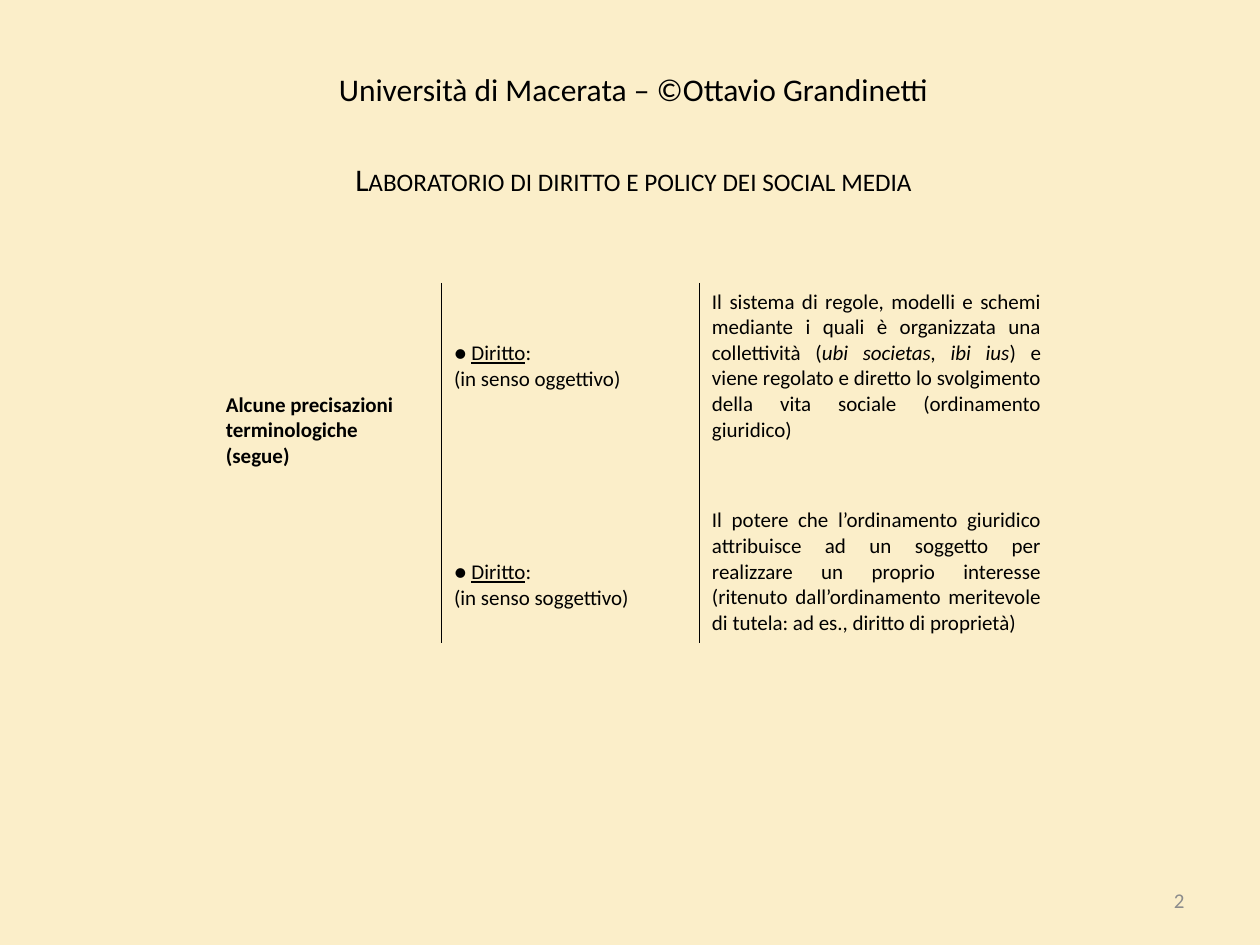
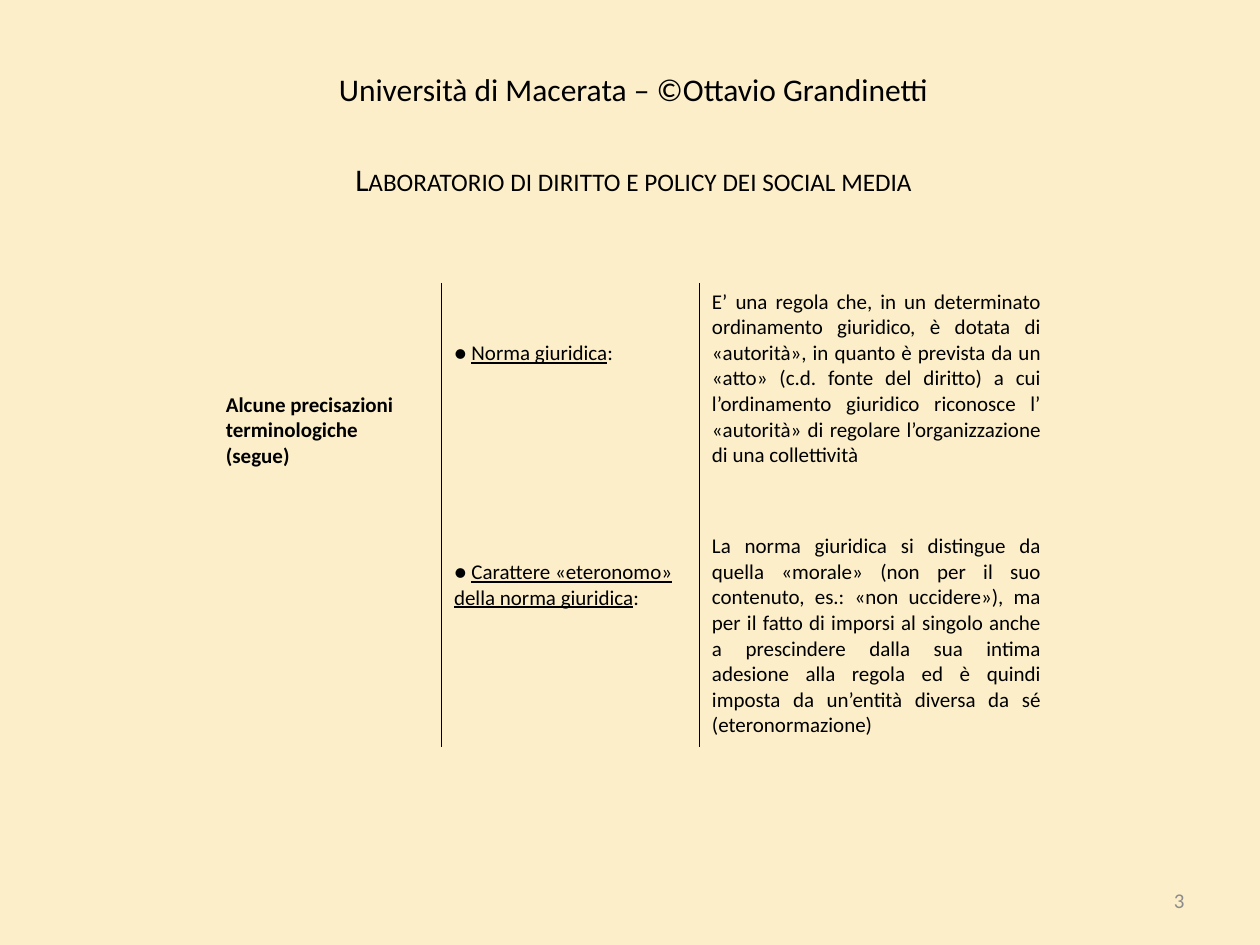
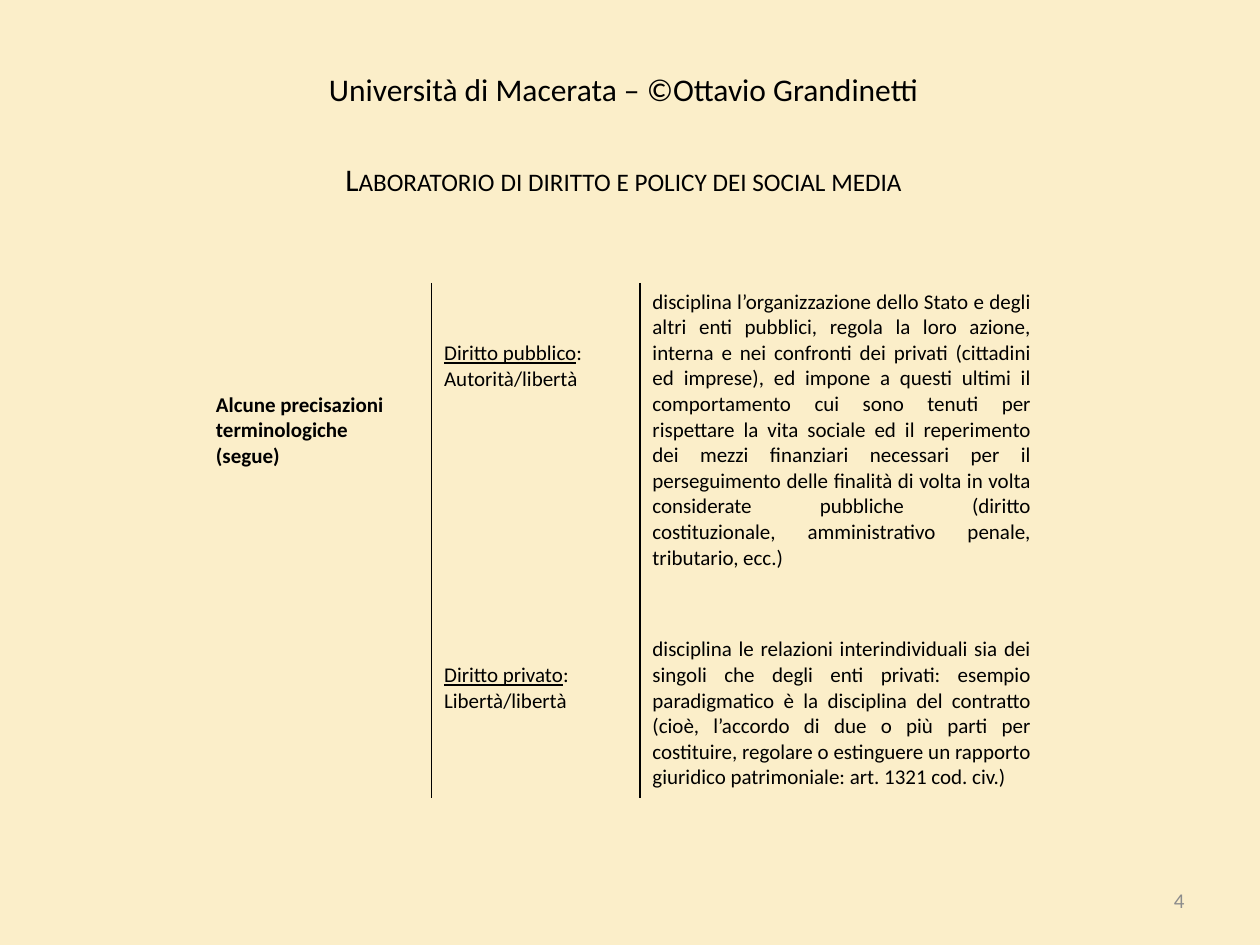
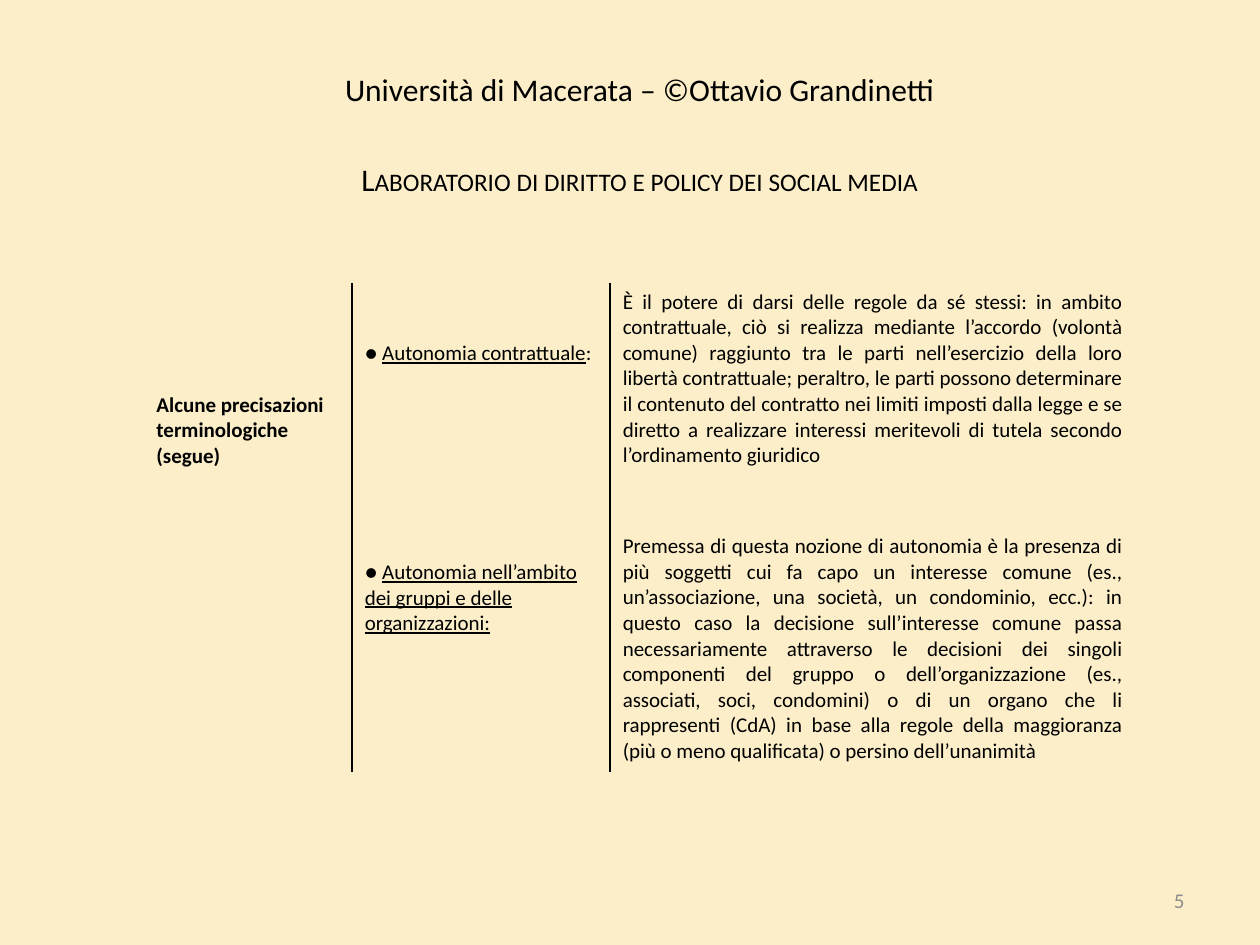
"""Build four slides of legal definitions, each laid out in a bordered table."""
import pptx
import pptx.dml.color
import pptx.enum.text
import pptx.oxml
import pptx.oxml.ns
import pptx.util

Cm, Pt = pptx.util.Cm, pptx.util.Pt
ALIGN = pptx.enum.text.PP_ALIGN
COLORS = {"paper": "FBEEC9", "ink": "000000", "number": "8C8C8C"}
NO_GRID = "{2D5ABB26-0587-4C30-8999-92F81FD0307C}"
PAD, LINE, HEAD_LINE = 0.13, 0.52, 0.77
HEADING = "Università di Macerata – ©Ottavio Grandinetti"
COURSE = "Laboratorio di diritto e policy dei social media"
TOPIC = [["Alcune precisazioni terminologiche"], ["(segue)"]]
DOT = "● "


class Deck:
    """Hold the shared style and the current slide."""

    def __init__(self):
        self.prs = pptx.Presentation()
        self.prs.slide_width, self.prs.slide_height = Cm(25.4), Cm(19.05)
        self.s = None

    def rgb(self, name):
        return pptx.dml.color.RGBColor.from_string(COLORS[name])

    def slide(self, number):
        self.s = self.prs.slides.add_slide(self.prs.slide_layouts[6])
        fill = self.s.background.fill
        fill.solid()
        fill.fore_color.rgb = self.rgb("paper")
        sp = self.s.shapes.add_textbox(Cm(18.2), Cm(17.65), Cm(5.93), Cm(1.01))
        sp.text_frame.vertical_anchor = pptx.enum.text.MSO_ANCHOR.MIDDLE
        self.text(sp.text_frame, [[str(number)]], align=ALIGN.RIGHT, color="number")

    def text(self, tf, paragraphs, size=12, align=ALIGN.LEFT, color="ink", bold=False):
        tf.word_wrap = True
        for i, runs in enumerate(paragraphs):
            p = tf.add_paragraph() if i else tf.paragraphs[0]
            p.alignment = align
            p.font.name, p.font.size, p.font.bold = "Calibri", Pt(size), bold
            p.font.color.rgb = self.rgb(color)
            for run in runs:
                words, style = run if isinstance(run, tuple) else (run, "")
                r = p.add_run()
                r.text = words
                if style == "underline":
                    r.font.underline = True
                elif style == "italic":
                    r.font.italic = True
                elif style == "small caps":
                    r._r.get_or_add_rPr().set("cap", "small")

    def cell(self, cell, paragraphs, drop=0.0, **style):
        cell.margin_top = Cm(PAD + drop)
        self.text(cell.text_frame, paragraphs, **style)

    def border(self, cell, side):
        ln = pptx.oxml.parse_xml(
            f'<a:{side} {pptx.oxml.ns.nsdecls("a")} w="12700"><a:solidFill>'
            f'<a:srgbClr val="{COLORS["ink"]}"/></a:solidFill></a:{side}>')
        cell._tc.get_or_add_tcPr().insert(0, ln)

    def table(self, left, widths, entries):
        heights = [1.03, 3.35] + [2 * PAD + LINE * e["lines"] for e in entries]
        heights.insert(3, 1.03)
        frame = self.s.shapes.add_table(5, 3, Cm(left), Cm(1.32),
                                        Cm(sum(widths)), Cm(sum(heights)))
        t = frame.table
        t.first_row = t.horz_banding = False
        t._tbl.tblPr.find(pptx.oxml.ns.qn("a:tableStyleId")).text = NO_GRID
        for column, width in zip(t.columns, widths):
            column.width = Cm(width)
        for row, height in zip(t.rows, heights):
            row.height = Cm(height)
        for c in t.iter_cells():
            c.fill.background()
            c.margin_bottom = Cm(PAD)
        for row in (0, 1):
            t.cell(row, 0).merge(t.cell(row, 2))
        t.cell(2, 0).merge(t.cell(4, 0))
        for row in (2, 3, 4):
            self.border(t.cell(row, 0), "lnR")
            self.border(t.cell(row, 1), "lnL")
        self.cell(t.cell(0, 0), [[HEADING]], size=18, align=ALIGN.CENTER)
        self.cell(t.cell(1, 0), [[(COURSE, "small caps")]], HEAD_LINE,
                  size=18, align=ALIGN.CENTER)
        self.cell(t.cell(2, 0), TOPIC, 4 * LINE, bold=True)
        for row, e in zip((2, 4), entries):
            self.cell(t.cell(row, 1), e["term"], e["drop"] * LINE)
            self.cell(t.cell(row, 2), [e["meaning"]], align=ALIGN.JUSTIFY)


def entry(lines, drop, term, *meaning, mark=DOT, end=":", note=None):
    first = [mark] if mark else []
    first.append((term, "underline"))
    if end:
        first.append(end)
    paragraphs = [first, [note]] if note else [first]
    return {"lines": lines, "drop": drop, "term": paragraphs, "meaning": meaning}


SLIDES = [
    (4.3, (4.6, 5.2, 7.14), [
        entry(6, 2, "Diritto",
              "Il sistema di regole, modelli e schemi mediante i quali è organizzata una "
              "collettività (", ("ubi societas, ibi ius", "italic"),
              ") e viene regolato e diretto lo svolgimento della vita sociale "
              "(ordinamento giuridico)", note="(in senso oggettivo)"),
        entry(5, 2, "Diritto",
              "Il potere che l’ordinamento giuridico attribuisce ad un soggetto per "
              "realizzare un proprio interesse (ritenuto dall’ordinamento meritevole di "
              "tutela: ad es., diritto di proprietà)", note="(in senso soggettivo)")]),
    (4.3, (4.6, 5.2, 7.14), [
        entry(7, 2, "Norma giuridica",
              "E’ una regola che, in un determinato ordinamento giuridico, è dotata di "
              "«autorità», in quanto è prevista da un «atto» (c.d. fonte del diritto) a cui "
              "l’ordinamento giuridico riconosce l’ «autorità» di regolare "
              "l’organizzazione di una collettività"),
        entry(8, 1, "Carattere «eteronomo» della norma giuridica",
              "La norma giuridica si distingue da quella «morale» (non per il suo "
              "contenuto, es.: «non uccidere»), ma per il fatto di imporsi al singolo anche "
              "a prescindere dalla sua intima adesione alla regola ed è quindi imposta da "
              "un’entità diversa da sé (eteronormazione)")]),
    (4.1, (4.6, 4.2, 8.14), [
        entry(11, 2, "Diritto pubblico",
              "disciplina l’organizzazione dello Stato e degli altri enti pubblici, regola "
              "la loro azione, interna e nei confronti dei privati (cittadini ed imprese), "
              "ed impone a questi ultimi il comportamento cui sono tenuti per rispettare la "
              "vita sociale ed il reperimento dei mezzi finanziari necessari per il "
              "perseguimento delle finalità di volta in volta considerate pubbliche "
              "(diritto costituzionale, amministrativo penale, tributario, ecc.)",
              mark="", note="Autorità/libertà"),
        entry(6, 1, "Diritto privato",
              "disciplina le relazioni interindividuali sia dei singoli che degli enti "
              "privati: esempio paradigmatico è la disciplina del contratto (cioè, "
              "l’accordo di due o più parti per costituire, regolare o estinguere un "
              "rapporto giuridico patrimoniale: art. 1321 cod. civ.)",
              mark="", note="Libertà/libertà")]),
    (2.9, (4.2, 5.2, 10.59), [
        entry(7, 2, "Autonomia contrattuale",
              "È il potere di darsi delle regole da sé stessi: in ambito contrattuale, ciò "
              "si realizza mediante l’accordo (volontà comune) raggiunto tra le parti "
              "nell’esercizio della loro libertà contrattuale; peraltro, le parti possono "
              "determinare il contenuto del contratto nei limiti imposti dalla legge e se "
              "diretto a realizzare interessi meritevoli di tutela secondo l’ordinamento "
              "giuridico"),
        entry(9, 1, "Autonomia nell’ambito dei gruppi e delle organizzazioni:",
              "Premessa di questa nozione di autonomia è la presenza di più soggetti cui fa "
              "capo un interesse comune (es., un’associazione, una società, un condominio, "
              "ecc.): in questo caso la decisione sull’interesse comune passa "
              "necessariamente attraverso le decisioni dei singoli componenti del gruppo o "
              "dell’organizzazione (es., associati, soci, condomini) o di un organo che li "
              "rappresenti (CdA) in base alla regole della maggioranza (più o meno "
              "qualificata) o persino dell’unanimità", end="")]),
]


def main():
    deck = Deck()
    for number, (left, widths, entries) in enumerate(SLIDES, start=2):
        deck.slide(number)
        deck.table(left, widths, entries)
    deck.prs.save("out.pptx")


if __name__ == "__main__":
    main()
